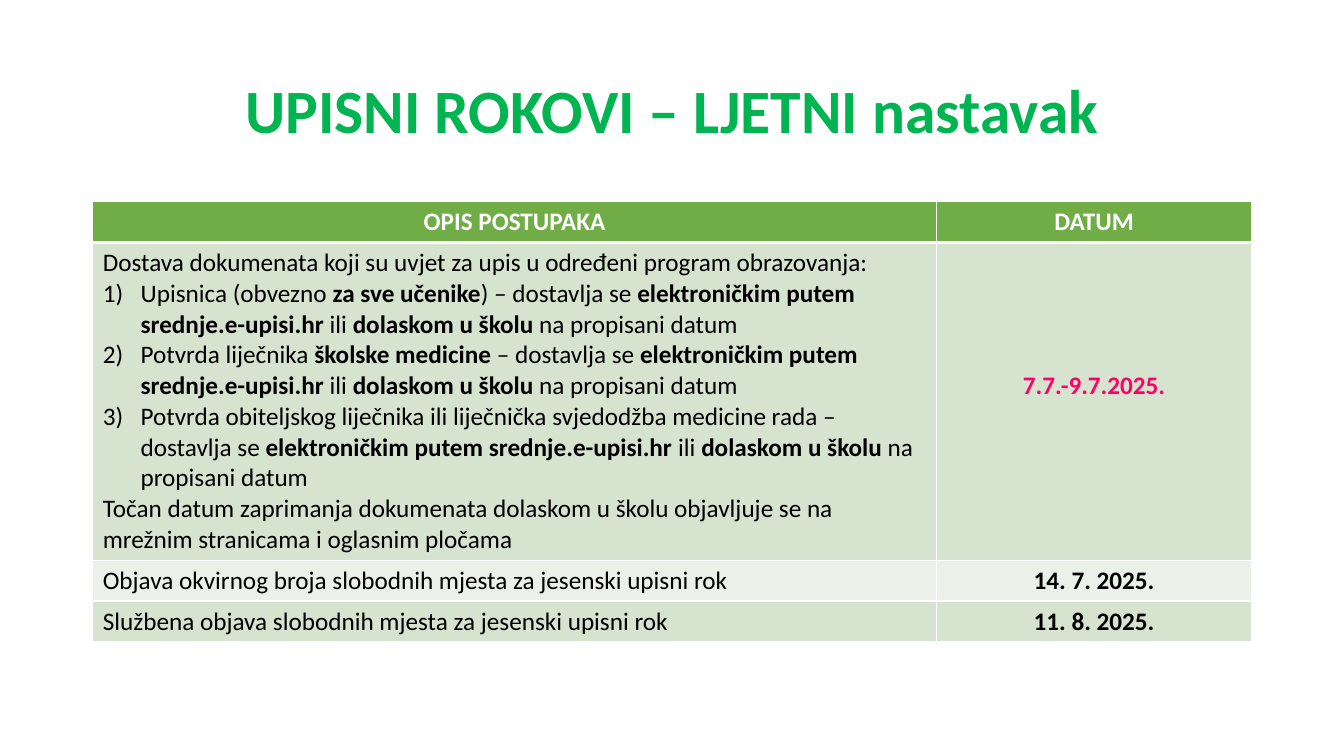
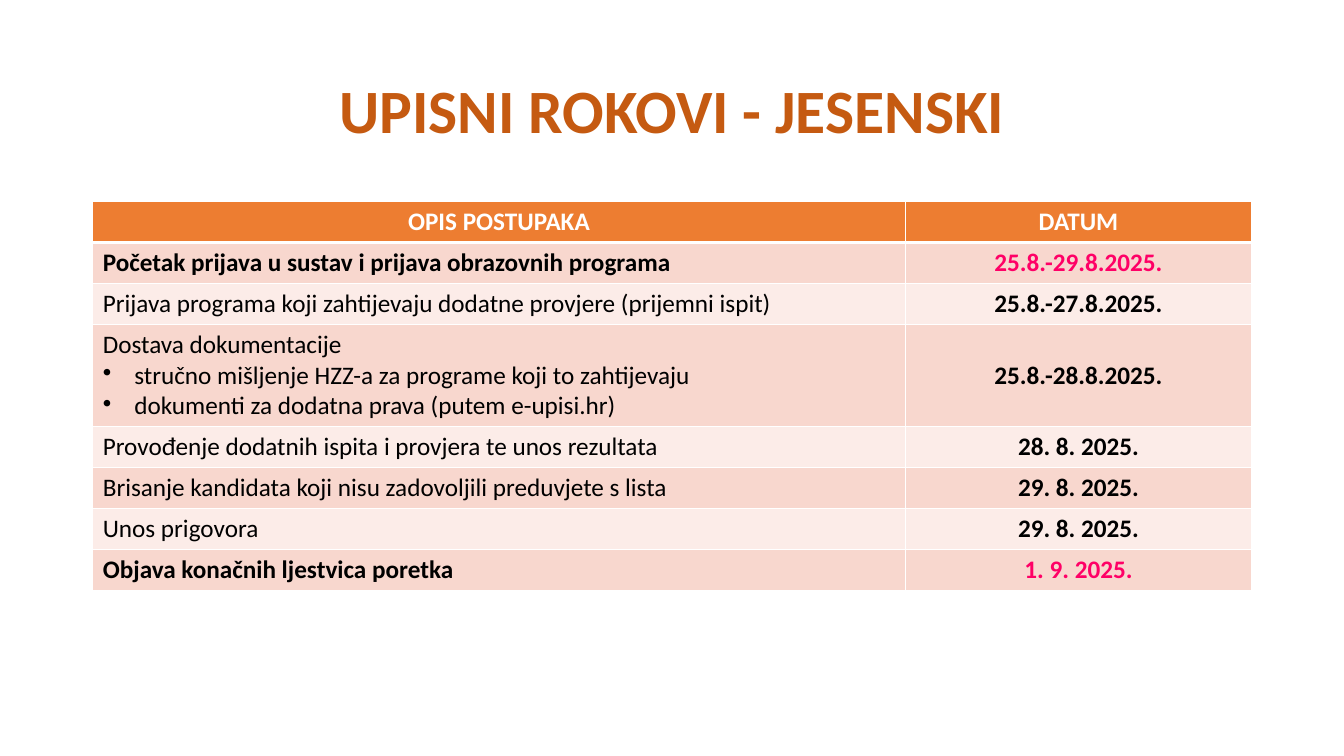
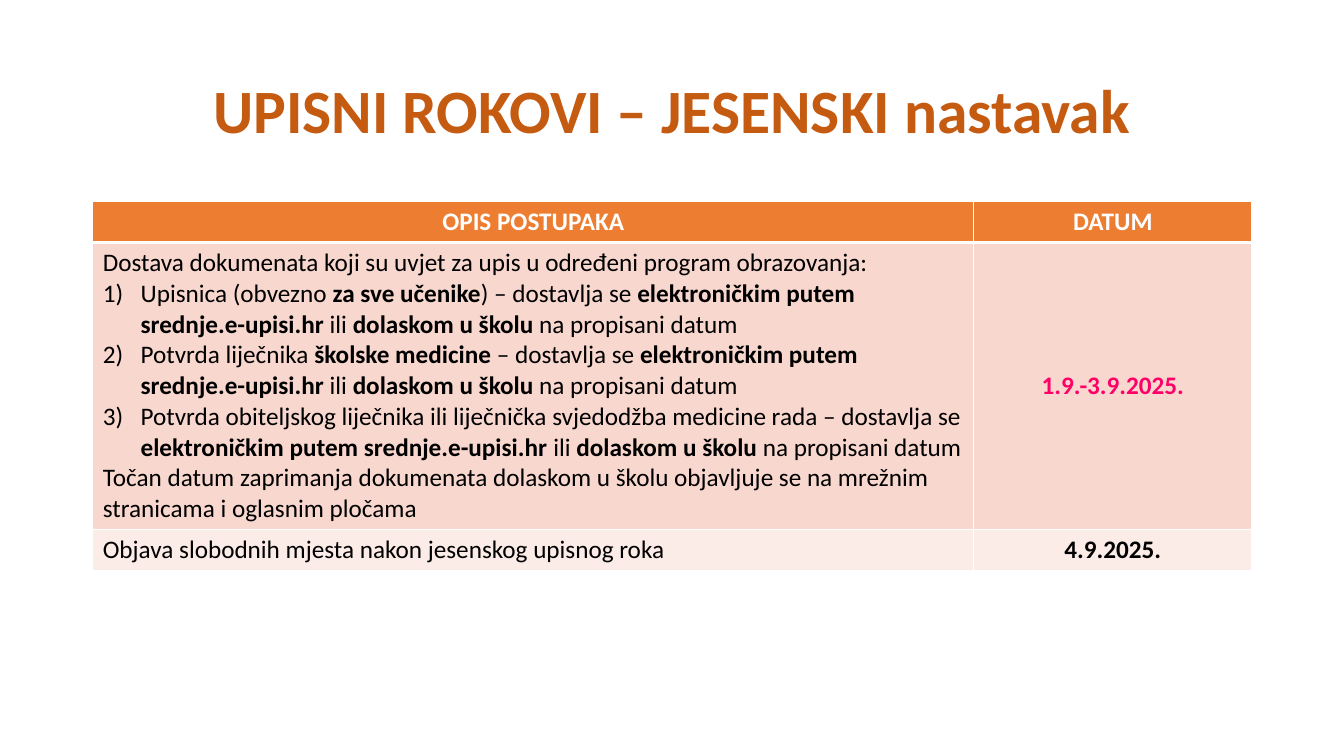
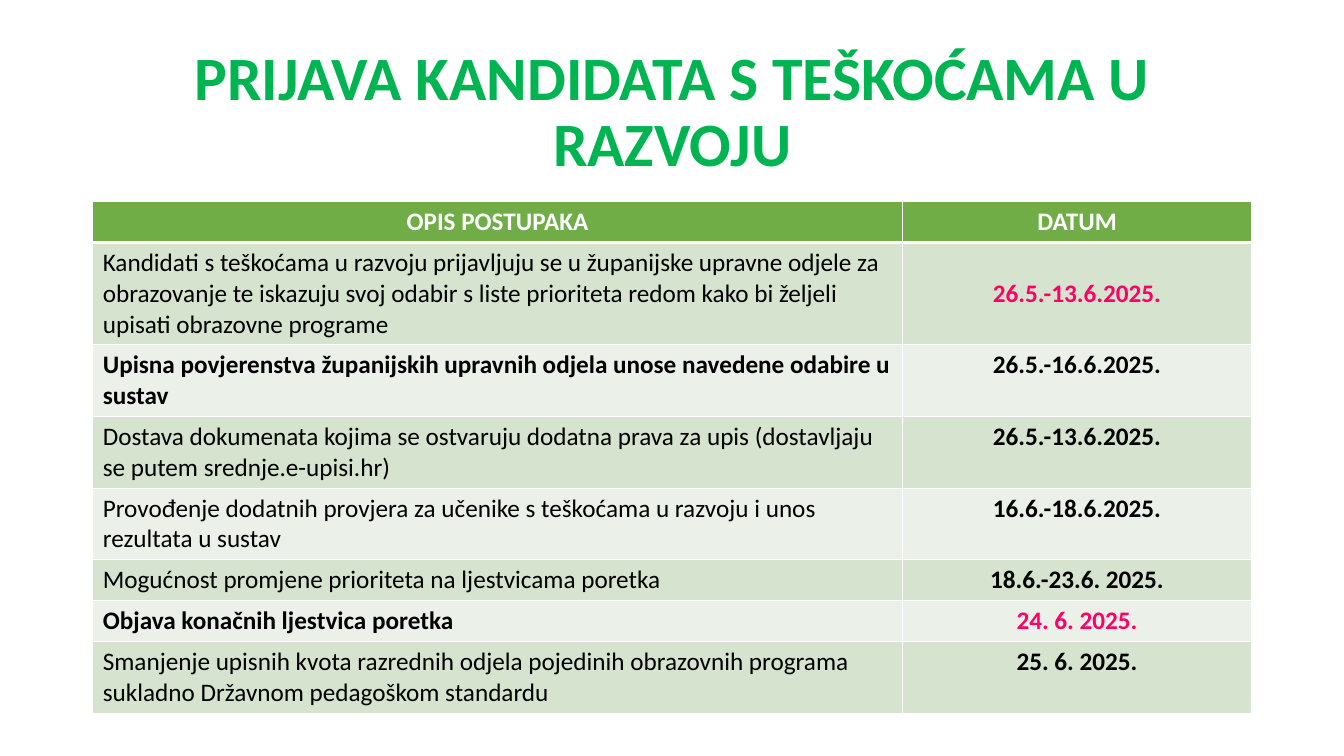
from dataclasses import dataclass

from pptx import Presentation
from pptx.dml.color import RGBColor
from pptx.enum import text as t
from pptx.oxml import ns, xmlchemy
from pptx.util import Pt

WHITE = RGBColor(0xFF, 0xFF, 0xFF)
BLACK = RGBColor(0x00, 0x00, 0x00)
PINK = RGBColor(0xFF, 0x00, 0x66)
FONT = "Calibri"
LEFT, WIDTH = 66.24, 828
TITLE_BOX = (LEFT, 28.75, WIDTH, 104.4)
TABLE_TOP = 144
LINE_HEIGHT = 21.97
CELL_PAD = 3.6
LAYOUT_TITLE_ONLY = 5


@dataclass
class Palette:
    title: RGBColor
    header: RGBColor
    bands: tuple


SUMMER = Palette(RGBColor(0x00, 0xB4, 0x51), RGBColor(0x70, 0xAD, 0x47),
                 (RGBColor(0xD5, 0xE3, 0xCF), RGBColor(0xEB, 0xF1, 0xE9)))
AUTUMN = Palette(RGBColor(0xC5, 0x5A, 0x11), RGBColor(0xED, 0x7D, 0x31),
                 (RGBColor(0xF8, 0xD7, 0xCE), RGBColor(0xFC, 0xEC, 0xE8)))


@dataclass
class Step:
    """A table row; *...* marks bold, "# " a numbered and "- " a bulleted line."""
    description: str
    date: str
    lines: int = 1
    date_line: int = 0
    key_date: bool = False


DOCUMENTS = """Dostava dokumenata koji su uvjet za upis u određeni program obrazovanja:
# Upisnica (obvezno *za sve učenike*) – dostavlja se *elektroničkim putem srednje.e-upisi.hr* ili *dolaskom u školu* na propisani datum
# Potvrda liječnika *školske medicine* – dostavlja se *elektroničkim putem srednje.e-upisi.hr* ili *dolaskom u školu* na propisani datum
# Potvrda obiteljskog liječnika ili liječnička svjedodžba medicine rada – dostavlja se *elektroničkim putem srednje.e-upisi.hr* ili *dolaskom u školu* na propisani datum
Točan datum zaprimanja dokumenata dolaskom u školu objavljuje se na mrežnim stranicama i oglasnim pločama"""

AUTUMN_PAPERS = """Dostava dokumentacije
- stručno mišljenje HZZ-a za programe koji to zahtijevaju
- dokumenti za dodatna prava (putem e-upisi.hr)"""

# Title, palette, width of the date column, steps
PAGES = [
    ("UPISNI ROKOVI – LJETNI nastavak", SUMMER, 225.4, [
        Step(DOCUMENTS, "7.7.-9.7.2025.", 10, 4, True),
        Step("Objava okvirnog broja slobodnih mjesta za jesenski upisni rok", "14. 7. 2025."),
        Step("Službena objava slobodnih mjesta za jesenski upisni rok", "11. 8. 2025."),
    ]),
    ("UPISNI ROKOVI - JESENSKI", AUTUMN, 247.7, [
        Step("*Početak prijava u sustav i prijava obrazovnih programa*", "25.8.-29.8.2025.",
             key_date=True),
        Step("Prijava programa koji zahtijevaju dodatne provjere (prijemni ispit)",
             "25.8.-27.8.2025."),
        Step(AUTUMN_PAPERS, "25.8.-28.8.2025.", 3, 1),
        Step("Provođenje dodatnih ispita i provjera te unos rezultata", "28. 8. 2025."),
        Step("Brisanje kandidata koji nisu zadovoljili preduvjete s lista", "29. 8. 2025."),
        Step("Unos prigovora", "29. 8. 2025."),
        Step("*Objava konačnih ljestvica poretka*", "1. 9. 2025.", key_date=True),
    ]),
    ("UPISNI ROKOVI – JESENSKI nastavak", AUTUMN, 198.7, [
        Step(DOCUMENTS, "1.9.-3.9.2025.", 9, 4, True),
        Step("Objava slobodnih mjesta nakon jesenskog upisnog roka", "4.9.2025."),
    ]),
    ("PRIJAVA KANDIDATA S TEŠKOĆAMA U RAZVOJU", SUMMER, 249.8, [
        Step("Kandidati s teškoćama u razvoju prijavljuju se u županijske upravne odjele za "
             "obrazovanje te iskazuju svoj odabir s liste prioriteta redom kako bi željeli "
             "upisati obrazovne programe", "26.5.-13.6.2025.", 3, 1, True),
        Step("*Upisna povjerenstva županijskih upravnih odjela unose navedene odabire u sustav*",
             "26.5.-16.6.2025.", 2),
        Step("Dostava dokumenata kojima se ostvaruju dodatna prava za upis (dostavljaju se "
             "putem srednje.e-upisi.hr)", "26.5.-13.6.2025.", 2),
        Step("Provođenje dodatnih provjera za učenike s teškoćama u razvoju i unos rezultata "
             "u sustav", "16.6.-18.6.2025.", 2),
        Step("Mogućnost promjene prioriteta na ljestvicama poretka", "18.6.-23.6. 2025."),
        Step("*Objava konačnih ljestvica poretka*", "24. 6. 2025.", key_date=True),
        Step("Smanjenje upisnih kvota razrednih odjela pojedinih obrazovnih programa sukladno "
             "Državnom pedagoškom standardu", "25. 6. 2025.", 2),
    ]),
]

# Prefix: hanging indent in points, bullet element and its attributes
LIST_MARKS = {
    "# ": (27, "a:buAutoNum", {"type": "arabicParenR"}),
    "- ": (22.5, "a:buChar", {"char": "•"}),
}


def add_span(para, words, color, size=18, bold=False):
    span = para.add_run()
    span.text = words
    for name, value in {"name": FONT, "size": Pt(size), "bold": bold}.items():
        setattr(span.font, name, value)
    span.font.color.rgb = color


def set_list_mark(para, mark):
    indent, tag, attributes = LIST_MARKS[mark]
    properties = para._p.get_or_add_pPr()
    properties.set("marL", str(Pt(indent)))
    properties.set("indent", str(-Pt(indent)))
    bullet = xmlchemy.OxmlElement(tag)
    for name, value in attributes.items():
        bullet.set(name, value)
    properties.append(bullet)


def write_description(cell, description):
    for index, line in enumerate(description.split("\n")):
        frame = cell.text_frame
        para = frame.add_paragraph() if index else frame.paragraphs[0]
        if line[:2] in LIST_MARKS:
            set_list_mark(para, line[:2])
            line = line[2:]
        for part, words in enumerate(line.split("*")):
            if words:
                add_span(para, words, BLACK, bold=part % 2 == 1)


def write_centered(cell, words, color):
    para = cell.text_frame.paragraphs[0]
    para.alignment = t.PP_ALIGN.CENTER
    add_span(para, words, color, bold=True)


def paint_cell(cell, color, top=1, bottom=1):
    """Fill the cell and give it white borders, with widths in points."""
    cell.fill.solid()
    cell.fill.fore_color.rgb = color
    properties = cell._tc.get_or_add_tcPr()
    widths = {"a:lnL": 1, "a:lnR": 1, "a:lnT": top, "a:lnB": bottom}
    for index, (tag, width) in enumerate(widths.items()):
        border = xmlchemy.OxmlElement(tag)
        border.set("w", str(Pt(width)))
        fill = xmlchemy.OxmlElement("a:solidFill")
        shade = xmlchemy.OxmlElement("a:srgbClr")
        shade.set("val", str(WHITE))
        fill.append(shade)
        border.append(fill)
        properties.insert(index, border)


def row_height(lines):
    return lines * LINE_HEIGHT + 2 * CELL_PAD


def place_title(page, words, color, box):
    title = page.shapes.title
    for name, value in zip(("left", "top", "width", "height"), box):
        setattr(title, name, Pt(value))
    frame = title.text_frame
    settings = {"word_wrap": True, "auto_size": t.MSO_AUTO_SIZE.NONE,
                "vertical_anchor": t.MSO_ANCHOR.MIDDLE}
    for name, value in settings.items():
        setattr(frame, name, value)
    para = frame.paragraphs[0]
    para.alignment = t.PP_ALIGN.CENTER
    para.line_spacing = 0.9
    add_span(para, words, color, size=44, bold=True)


def place_schedule(page, steps, palette, date_width, left, top, width):
    heights = [row_height(1)] + [row_height(step.lines) for step in steps]
    table = page.shapes.add_table(len(heights), 2, Pt(left), Pt(top),
                                  Pt(width), Pt(sum(heights))).table
    for column, size in zip(table.columns, (width - date_width, date_width)):
        column.width = Pt(size)
    for row, height in zip(table.rows, heights):
        row.height = Pt(height)

    for cell, words in zip(table.rows[0].cells, ("OPIS POSTUPAKA", "DATUM")):
        paint_cell(cell, palette.header, bottom=3)
        write_centered(cell, words, WHITE)

    for index, step in enumerate(steps):
        description, date = table.rows[index + 1].cells
        for cell in (description, date):
            paint_cell(cell, palette.bands[index % 2], top=1 if index else 3)
        write_description(description, step.description)
        date.margin_top = Pt(CELL_PAD + step.date_line * LINE_HEIGHT)
        write_centered(date, step.date, PINK if step.key_date else BLACK)


def main():
    deck = Presentation()
    deck.slide_width, deck.slide_height = Pt(960), Pt(540)
    for title, palette, date_width, steps in PAGES:
        page = deck.slides.add_slide(deck.slide_layouts[LAYOUT_TITLE_ONLY])
        place_title(page, title, palette.title, TITLE_BOX)
        place_schedule(page, steps, palette, date_width, LEFT, TABLE_TOP, WIDTH)
    deck.save("out.pptx")


if __name__ == "__main__":
    main()
